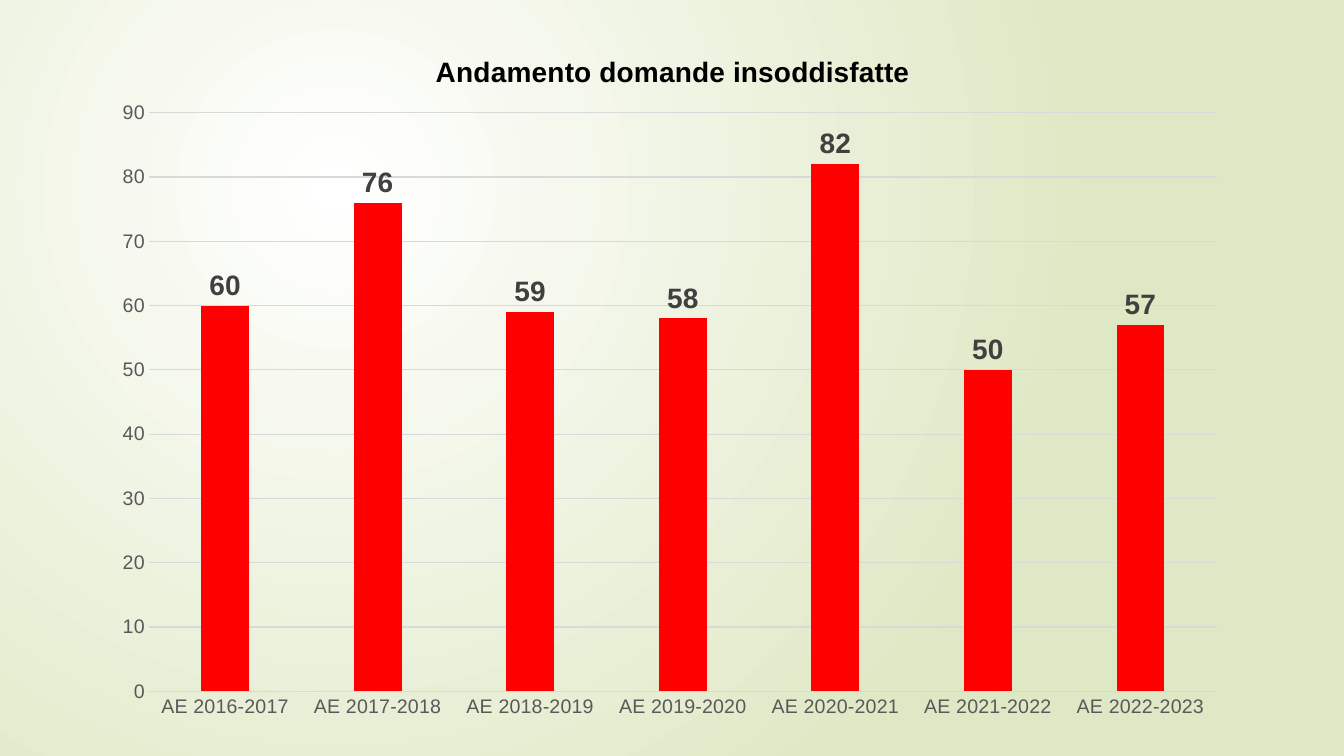
from lxml import etree
from pptx import Presentation
from pptx.chart import data as chart_data
from pptx.dml.color import RGBColor
from pptx.enum import chart as chart_enum
from pptx.oxml import ns
from pptx.util import Pt

WHITE = RGBColor(0xFF, 0xFF, 0xFF)
PALE_GREEN = RGBColor(0xDF, 0xE8, 0xC4)
BLACK = RGBColor(0, 0, 0)
DARK_GREY = RGBColor(0x40, 0x40, 0x40)
GREY = RGBColor(0x59, 0x59, 0x59)
LIGHT_GREY = RGBColor(0xD9, 0xD9, 0xD9)
RED = RGBColor(0xFF, 0, 0)

REQUESTS = {
    "AE 2016-2017": 60,
    "AE 2017-2018": 76,
    "AE 2018-2019": 59,
    "AE 2019-2020": 58,
    "AE 2020-2021": 82,
    "AE 2021-2022": 50,
    "AE 2022-2023": 57,
}


def style_font(font, size, color, bold=False, name="Arial"):
    font.name = name
    font.size = Pt(size)
    font.bold = bold
    font.color.rgb = color


def style_line(line, color):
    line.color.rgb = color
    line.width = Pt(0.75)


def paint_background(slide):
    fill = slide.background.fill
    fill.gradient()
    for stop, color in zip(fill.gradient_stops, (WHITE, PALE_GREEN)):
        stop.color.rgb = color
    gradient = slide.element.find(".//" + ns.qn("a:gradFill"))
    gradient.remove(gradient.find(ns.qn("a:lin")))
    circle = etree.SubElement(gradient, ns.qn("a:path"), {"path": "circle"})
    etree.SubElement(circle, ns.qn("a:fillToRect"),
                     {"l": "50000", "t": "50000", "r": "100000", "b": "100000"})


def place(parent, **settings):
    layout = parent.find(ns.qn("c:layout"))
    if layout is None:
        layout = etree.Element(ns.qn("c:layout"))
        text = parent.find(ns.qn("c:tx"))
        parent.insert(0 if text is None else 1, layout)
    manual = etree.SubElement(layout, ns.qn("c:manualLayout"))
    for name, value in settings.items():
        etree.SubElement(manual, ns.qn("c:" + name), {"val": str(value)})


def style_axis(axis):
    axis.major_tick_mark = chart_enum.XL_TICK_MARK.NONE
    axis.minor_tick_mark = chart_enum.XL_TICK_MARK.NONE
    style_font(axis.tick_labels.font, 14, GREY)


def add_title(chart, title):
    paragraph = chart.chart_title.text_frame.paragraphs[0]
    run = paragraph.add_run()
    run.text = title
    style_font(run.font, 20, BLACK, bold=True)
    chart.chart_title.include_in_layout = False
    place(chart.chart_title._element, xMode="edge", yMode="edge", x=0.29, y=0.04)


def style_columns(plot):
    plot.gap_width = 219
    plot.overlap = -27
    plot.vary_by_categories = False
    series = plot.series[0]
    series.format.fill.solid()
    series.format.fill.fore_color.rgb = RED
    series.invert_if_negative = False
    labels = series.data_labels
    labels.show_value = True
    labels.number_format = "0"
    labels.number_format_is_linked = False
    labels.position = chart_enum.XL_LABEL_POSITION.OUTSIDE_END
    style_font(labels.font, 20, DARK_GREY, bold=True)


def add_column_chart(slide, title, values, left, top, width, height):
    data = chart_data.CategoryChartData(number_format="0")
    data.categories = list(values)
    data.add_series("Series 1", list(values.values()))
    chart = slide.shapes.add_chart(
        chart_enum.XL_CHART_TYPE.COLUMN_CLUSTERED,
        Pt(left), Pt(top), Pt(width), Pt(height), data).chart
    style_font(chart.font, 10, BLACK, name="League Spartan")
    chart.has_legend = False
    add_title(chart, title)
    style_columns(chart.plots[0])

    style_axis(chart.category_axis)
    style_line(chart.category_axis.format.line, LIGHT_GREY)

    value_axis = chart.value_axis
    style_axis(value_axis)
    value_axis.minimum_scale = 0
    value_axis.maximum_scale = 90
    value_axis.major_unit = 10
    value_axis.tick_labels.number_format = "0"
    value_axis.tick_labels.number_format_is_linked = False
    value_axis.format.line.fill.background()
    style_line(value_axis.major_gridlines.format.line, LIGHT_GREY)

    plot_area = chart.element.find(".//" + ns.qn("c:plotArea"))
    place(plot_area, layoutTarget="inner", xMode="edge", yMode="edge",
          x=0.043, y=0.13, w=0.936, h=0.812)


def main():
    presentation = Presentation()
    presentation.slide_width = Pt(960)
    presentation.slide_height = Pt(540)
    slide = presentation.slides.add_slide(presentation.slide_layouts[6])
    paint_background(slide)
    add_column_chart(slide, "Andamento domande insoddisfatte", REQUESTS,
                     71.3, 14.4, 815, 509)
    presentation.save("out.pptx")


if __name__ == "__main__":
    main()
